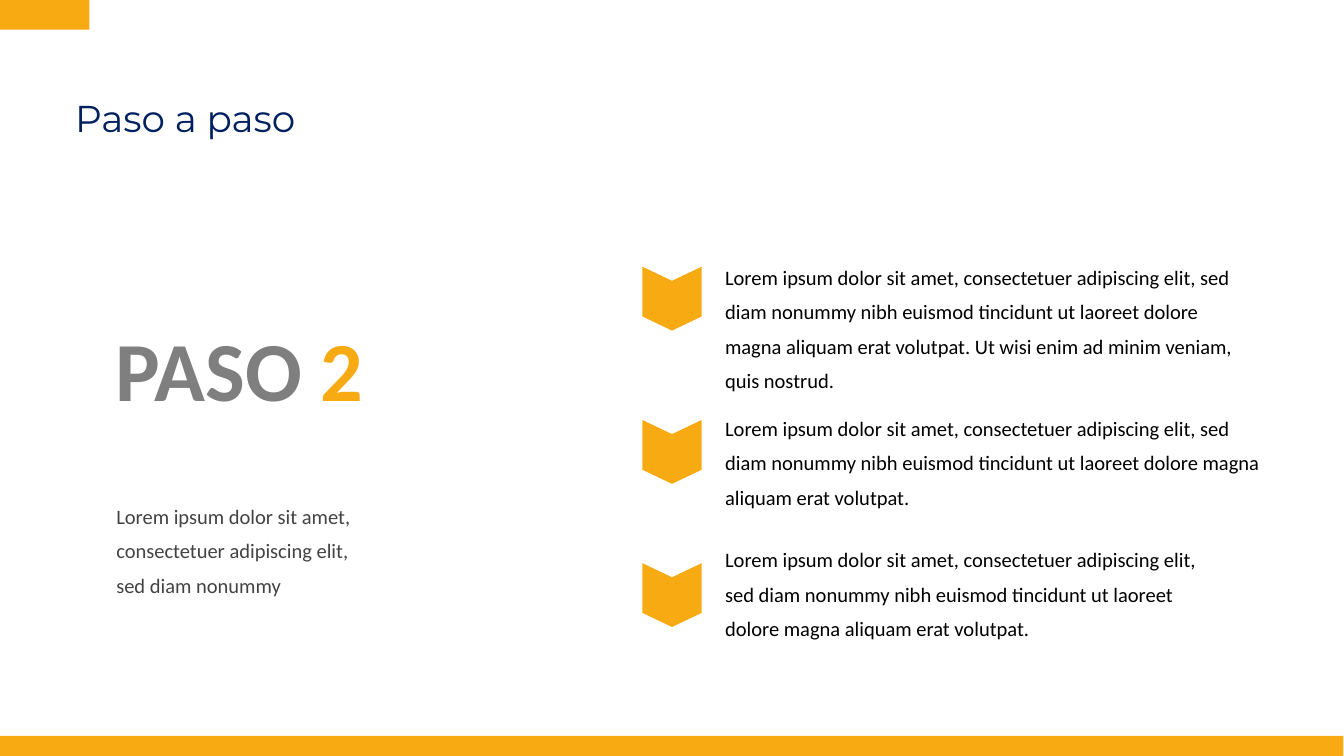
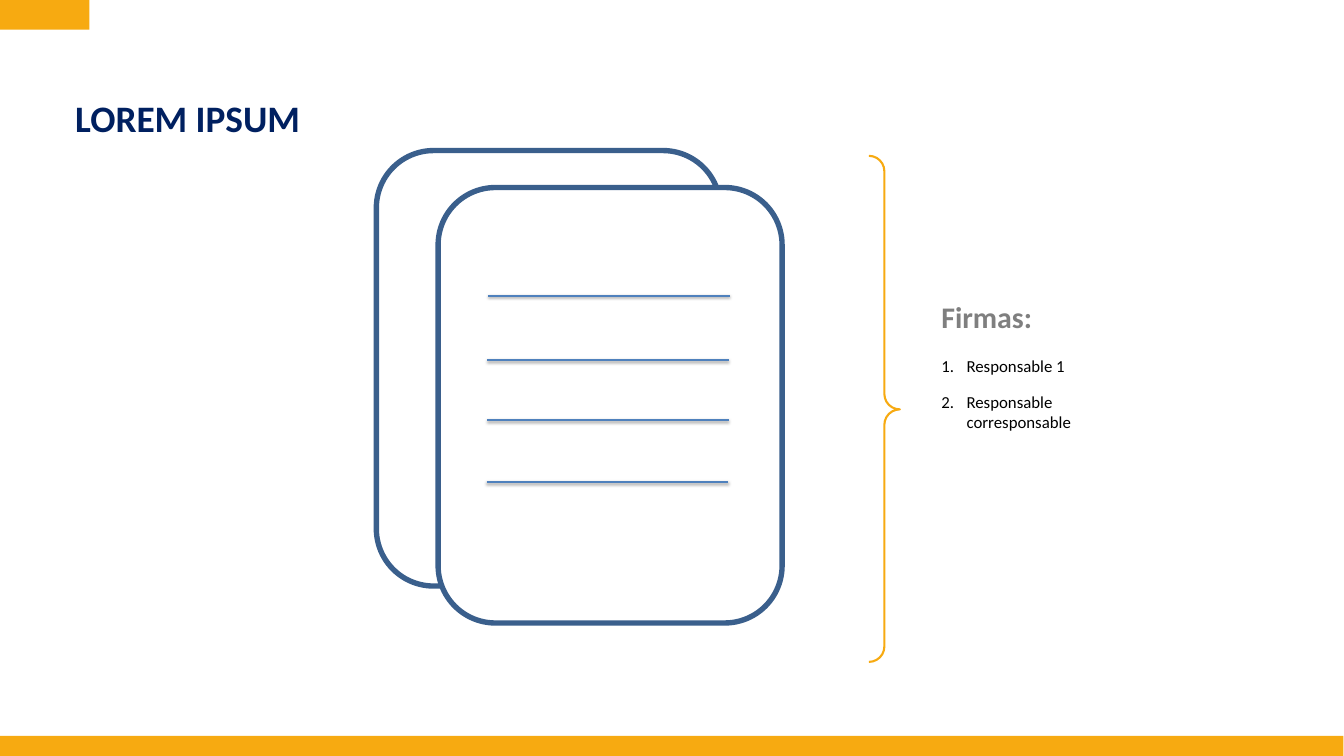
from lxml.etree import SubElement as Sub
from pptx import Presentation
from pptx.dml.color import RGBColor as Rgb
from pptx.enum.shapes import MSO_CONNECTOR as Conn, MSO_SHAPE as Kind
from pptx.enum.text import MSO_AUTO_SIZE as Auto, PP_ALIGN as Align
from pptx.oxml.ns import qn
from pptx.util import Pt

HUES = {
    "gold": "F7AA11",
    "navy": "002060",
    "steel": "3A5F8C",
    "blue": "4F81BD",
    "gray": "7F7F7F",
    "dark": "434343",
    "black": "000000",
    "white": "FFFFFF",
}
BODY = "Calibri"
LOREM = "Lorem ipsum dolor sit amet, consectetuer adipiscing elit, sed diam nonummy"
LONG = LOREM + " nibh euismod tincidunt ut laoreet dolore magna aliquam erat volutpat."


def hue(name):
    return Rgb.from_string(HUES[name])


def paint(shape, fill=None, line=None, width=0):
    shape.shadow.inherit = False
    if fill:
        shape.fill.solid()
        shape.fill.fore_color.rgb = hue(fill)
    else:
        shape.fill.background()
    if line:
        shape.line.color.rgb = hue(line)
        shape.line.width = Pt(width)
    else:
        shape.line.fill.background()


def block(slide, kind, spot, fill=None, line=None, width=0):
    shape = slide.shapes.add_shape(kind, *map(Pt, spot))
    paint(shape, fill, line, width)
    return shape


def frame(slide, spot, pad=(0, 0)):
    text = slide.shapes.add_textbox(*map(Pt, spot)).text_frame
    text.word_wrap = True
    text.auto_size = Auto.SHAPE_TO_FIT_TEXT
    text.margin_left = text.margin_right = Pt(pad[0])
    text.margin_top = text.margin_bottom = Pt(pad[1])
    return text


def style(para, size, tone, bold=False, face=BODY):
    font = para.font
    font.name, font.size, font.bold = face, Pt(size), bold
    font.color.rgb = hue(tone)


def label(slide, spot, words, size, tone, bold=False, face=BODY, gap=1.4):
    para = frame(slide, spot).paragraphs[0]
    para.text = words
    para.line_spacing = gap
    style(para, size, tone, bold, face)
    return para


def number(para):
    props = para._p.get_or_add_pPr()
    props.set("marL", str(Pt(27)))
    props.set("indent", str(-Pt(27)))
    tint = Sub(props, qn("a:buClr"))
    Sub(tint, qn("a:srgbClr"), val=HUES["black"])
    Sub(props, qn("a:buAutoNum"), type="arabicPeriod")


def arrow(slide, left, top):
    wide, high, notch = 63.4, 68.4, 15.1
    mid = left + wide / 2
    points = [
        (left, top),
        (mid, top + notch),
        (left + wide, top),
        (left + wide, top + high - notch),
        (mid, top + high),
        (left, top + high - notch),
    ]
    start, *rest = [(Pt(x), Pt(y)) for x, y in points]
    pen = slide.shapes.build_freeform(*start)
    pen.add_line_segments(rest)
    paint(pen.convert_to_shape(), "gold")


def rule(slide, left, top, wide):
    ends = map(Pt, (left, top, left + wide, top))
    line = slide.shapes.add_connector(Conn.STRAIGHT, *ends)
    line.line.color.rgb = hue("blue")
    line.line.width = Pt(0)
    glow = Sub(line._element.spPr, qn("a:effectLst"))
    shade = Sub(glow, qn("a:outerShdw"), blurRad=str(Pt(3.1)),
                dist=str(Pt(1.6)), dir="5400000", rotWithShape="0")
    tint = Sub(shade, qn("a:srgbClr"), val=HUES["black"])
    Sub(tint, qn("a:alpha"), val="38000")


def page(deck, title, wide, bold=False, face=BODY):
    slide = deck.slides.add_slide(deck.slide_layouts[6])
    block(slide, Kind.RECTANGLE, (0, 0, 95.8, 31.7), "gold")
    block(slide, Kind.RECTANGLE, (0, 788.4, 1439.3, 21.6), "gold")
    label(slide, (80.6, 92.2, wide, 48.2), title, 40, "navy", bold, face, 1.21)
    return slide


def steps(deck):
    slide = page(deck, "Paso a paso", 1190.9, face="Montserrat")
    step = label(slide, (95.8, 297.4, 321.8, 152.6), "PASO ", 90, "gray", True)
    step.alignment = Align.CENTER
    digit = step.add_run()
    digit.text = "2"
    digit.font.color.rgb = hue("gold")
    label(slide, (124.6, 529.2, 252, 101.5), LOREM, 22, "dark")
    items = [
        (285.8, 272.9, 556.6, LONG + " Ut wisi enim ad minim veniam, quis nostrud."),
        (450, 434.9, 581.8, LONG),
        (603.4, 576, 532.1, LONG),
    ]
    for peak, top, wide, words in items:
        arrow(slide, 688.3, peak)
        label(slide, (776.9, top, wide, 101.5), words, 22, "black")


def signing(deck):
    slide = page(deck, "LOREM IPSUM", 735.1, True)
    text = frame(slide, (1001.5, 316.8, 157.7, 150.5), (7.2, 3.6))
    head = text.paragraphs[0]
    head.text = "Firmas:"
    style(head, 32, "gray", True)
    for words, gap in (("Responsable 1", 22), ("Responsable corresponsable", 17)):
        para = text.add_paragraph()
        para.text = words
        number(para)
        para.space_before = Pt(gap)
        style(para, 18, "black")
    brace = block(slide, Kind.RIGHT_BRACE, (931, 167, 33.1, 542.2),
                  line="gold", width=2.25)
    brace.adjustments[0] = 0.5
    brace.adjustments[1] = 0.501
    for left, top, fill in ((403.2, 161.3, None), (469.4, 200.9, "white")):
        block(slide, Kind.ROUNDED_RECTANGLE, (left, top, 368.6, 466.6),
              fill, "steel", 5.75)
    for left, top in ((522.7, 316.8), (522, 385.9), (522, 450), (521.3, 516.2)):
        rule(slide, left, top, 259.2)


def main():
    deck = Presentation()
    deck.slide_width, deck.slide_height = Pt(1440), Pt(810)
    steps(deck)
    signing(deck)
    deck.save("out.pptx")


if __name__ == "__main__":
    main()
